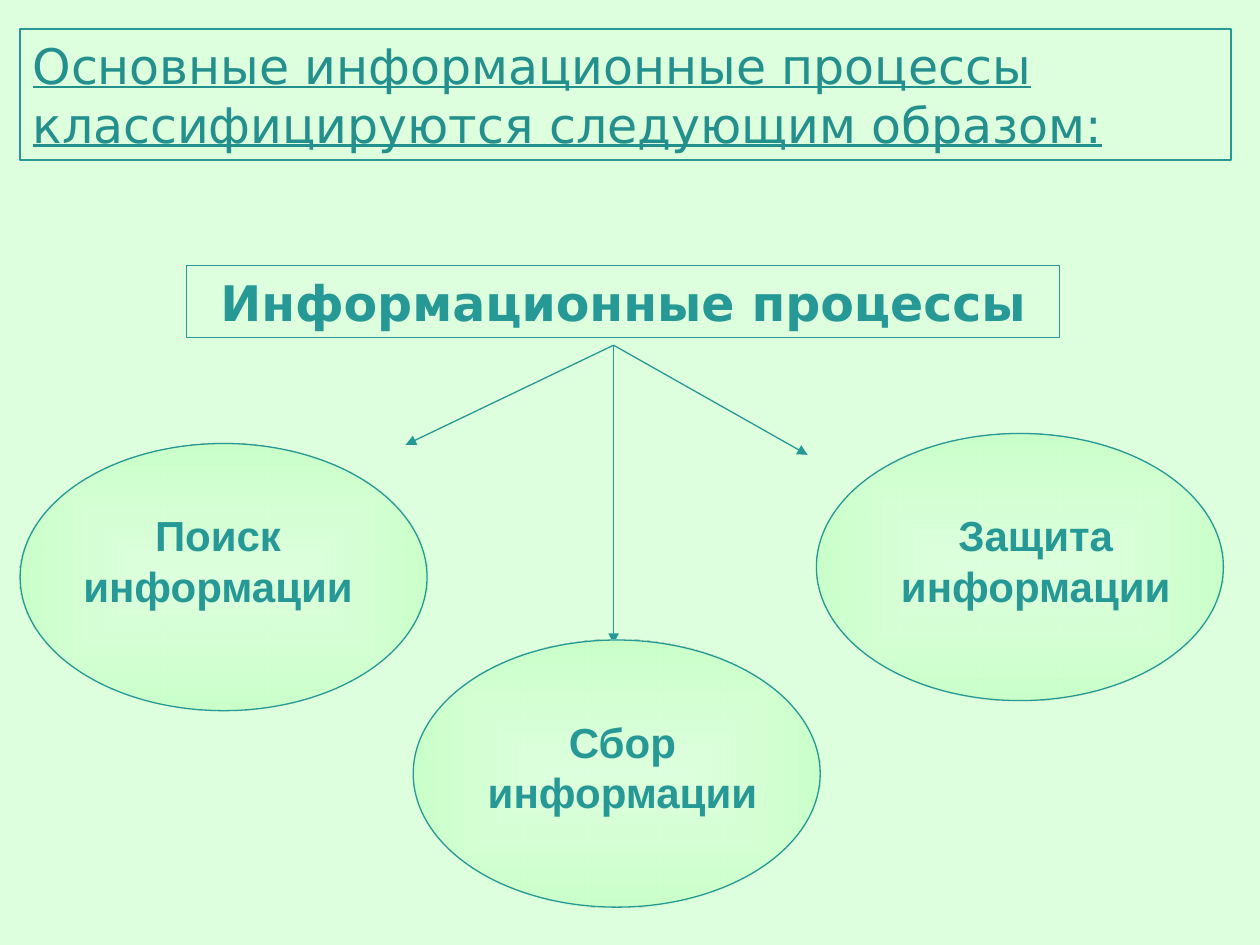
import pptx
import pptx.util
import pptx.dml.color
import pptx.enum.shapes
import pptx.enum.text
import pptx.oxml
import pptx.oxml.ns

RGB = pptx.dml.color.RGBColor
SHAPE = pptx.enum.shapes.MSO_SHAPE
ALIGN = pptx.enum.text.PP_ALIGN
qn = pptx.oxml.ns.qn

MINT = RGB(0xDD, 0xFF, 0xDD)
GREEN = RGB(0xC9, 0xFF, 0xC9)
TEAL = RGB(0x26, 0x99, 0x96)
DARK = RGB(0x24, 0x90, 0x8D)

CELL = pptx.util.Inches(0.1)  # the slide is 100 columns by 75 rows
OVAL = (32.3, 21.2)
LABEL = (25.2, 9.1)
HUB = (48.7, 27.4)


def grid(*cells):
    return [round(n * CELL) for n in cells]


def outline(line):
    line.color.rgb = TEAL
    line.width = pptx.util.Pt(0.75)


def write(shape, text, size, face, color, align=ALIGN.CENTER):
    """Put one wrapped paragraph in the shape and return its font."""
    frame = shape.text_frame
    frame.word_wrap = True
    frame.vertical_anchor = pptx.enum.text.MSO_ANCHOR.MIDDLE
    para = frame.paragraphs[0]
    para.alignment = align
    run = para.add_run()
    run.text = text
    font = run.font
    font.size, font.name = pptx.util.Pt(size), face
    font.color.rgb = color
    return font


def frame(slide, box, text, color, align):
    """Draw an outlined heading box and return the font of its text."""
    shape = slide.shapes.add_shape(SHAPE.RECTANGLE, *grid(*box))
    shape.shadow.inherit = False
    shape.fill.background()
    outline(shape.line)
    return write(shape, text, 28, "DejaVu Sans", color, align)


def arrow(slide, start, end):
    line = slide.shapes.add_connector(
        pptx.enum.shapes.MSO_CONNECTOR.STRAIGHT, *grid(*start, *end))
    outline(line.line)
    tip = pptx.oxml.parse_xml(
        f'<a:tailEnd {pptx.oxml.ns.nsdecls("a")} type="triangle"/>')
    line.line._get_or_add_ln().append(tip)
    props = line._element.spPr
    props.append(props.makeelement(qn("a:effectLst"), {}))


def glow(shape):
    """Fill from a translucent pale centre to a green rim."""
    shape.fill.gradient()
    for stop, color, place in zip(shape.fill.gradient_stops, (MINT, GREEN), (0, 1)):
        stop.color.rgb = color
        stop.position = place
    grad = shape._element.spPr.find(qn("a:gradFill"))
    pale = grad.find(".//" + qn("a:srgbClr"))
    pale.append(pale.makeelement(qn("a:alpha"), {"val": "59000"}))
    grad.replace(grad.find(qn("a:lin")), pptx.oxml.parse_xml(
        f'<a:path {pptx.oxml.ns.nsdecls("a")} path="shape">'
        '<a:fillToRect l="50000" t="50000" r="50000" b="50000"/></a:path>'))


def node(slide, left, top, shift, text):
    """Group an oval with its label, which is shifted from the oval's corner."""
    group = slide.shapes.add_group_shape()
    oval = group.shapes.add_shape(SHAPE.OVAL, *grid(left, top, *OVAL))
    oval.shadow.inherit = False
    glow(oval)
    outline(oval.line)
    label = group.shapes.add_textbox(
        *grid(left + shift[0], top + shift[1], *LABEL))
    write(label, text, 24, "Arial", TEAL).bold = True


def main():
    deck = pptx.Presentation()
    deck.slide_width, deck.slide_height = grid(100, 75)
    slide = deck.slides.add_slide(deck.slide_layouts[6])
    back = slide.background.fill
    back.solid()
    back.fore_color.rgb = MINT

    frame(slide, (14.8, 21.1, 69.3, 5.7), "Информационные процессы",
          TEAL, ALIGN.CENTER).bold = True
    for end in ((48.7, 51.1), (32.2, 35.3), (64.1, 36.1)):
        arrow(slide, HUB, end)
    for left, top, shift, text in (
            (32.8, 50.8, (4, 5.5), "Сбор информации"),
            (1.6, 35.2, (3.1, 4.7), "Поиск информации"),
            (64.8, 34.4, (4.8, 5.5), "Защита информации")):
        node(slide, left, top, shift, text)
    frame(slide, (1.6, 2.3, 96.1, 10.4),
          "Основные информационные процессы классифицируются следующим образом:",
          DARK, ALIGN.LEFT).underline = True
    deck.save("out.pptx")


if __name__ == "__main__":
    main()
